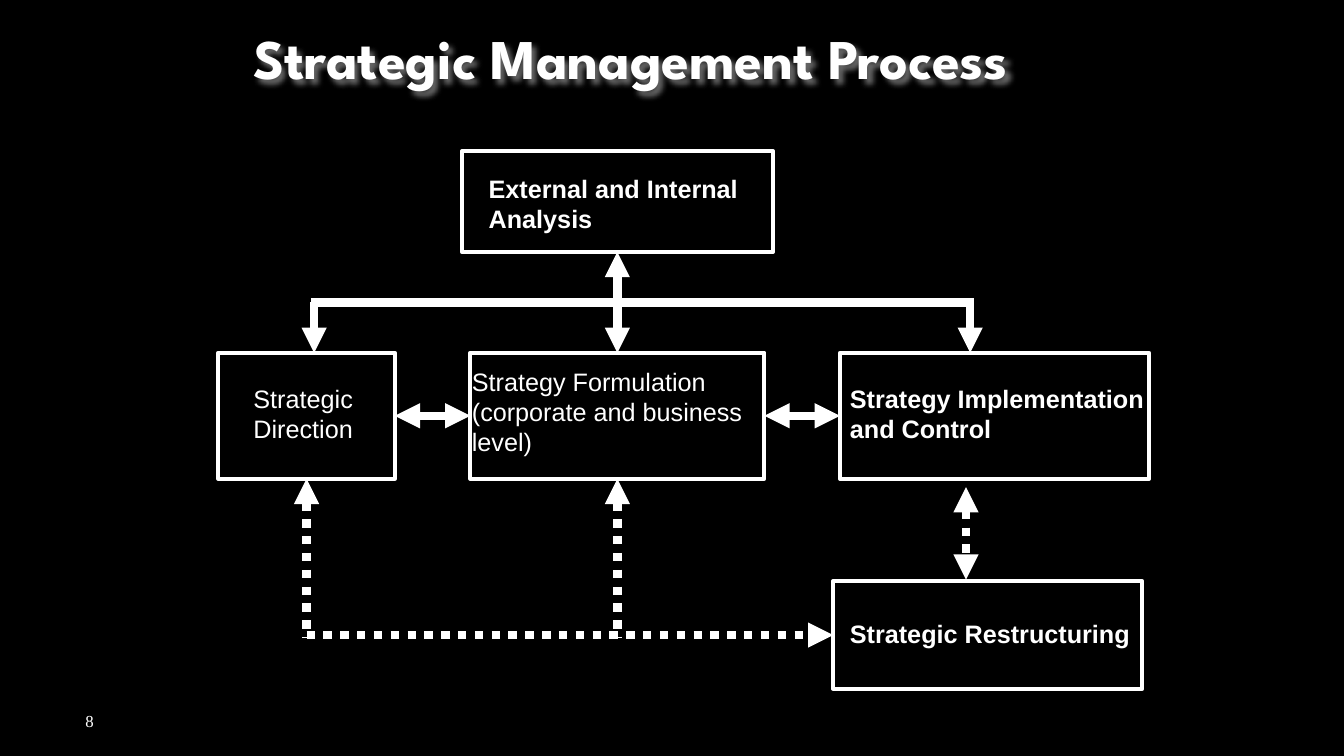
from dataclasses import dataclass

from lxml.etree import SubElement
from pptx import Presentation
from pptx.dml.color import RGBColor
from pptx.enum.dml import MSO_LINE
from pptx.enum.shapes import MSO_CONNECTOR, MSO_SHAPE
from pptx.enum.text import MSO_ANCHOR, MSO_AUTO_SIZE, PP_ALIGN
from pptx.oxml.ns import qn
from pptx.util import Inches, Pt

TOP, LEFT, BOTTOM, RIGHT = range(4)


@dataclass(frozen=True)
class Theme:
    back: str = "000000"
    ink: str = "FFFFFF"
    body: str = "Arial"
    head: str = "League Spartan"
    foot: str = "Times New Roman"
    body_size: int = 18
    head_size: int = 40
    foot_size: int = 12
    frame: int = 3
    arrow: int = 6


class Chart:
    """Draws on a grid of 160 columns by 90 rows, twelve to the inch."""

    def __init__(self, deck, theme):
        self.theme = theme
        self.ink = RGBColor.from_string(theme.ink)
        self.slide = deck.slides.add_slide(deck.slide_layouts[6])
        fill = self.slide.background.fill
        fill.solid()
        fill.fore_color.rgb = RGBColor.from_string(theme.back)

    def grid(self, *cells):
        return [Inches(cell / 12) for cell in cells]

    def box(self, *area):
        box = self.slide.shapes.add_shape(MSO_SHAPE.RECTANGLE, *self.grid(*area))
        box.shadow.inherit = False
        box.fill.background()
        box.line.color.rgb = self.ink
        box.line.width = Pt(self.theme.frame)
        return box

    def text(self, lines, area, bold=False, wrap=True, font=None, size=None, grow=True):
        label = self.slide.shapes.add_textbox(*self.grid(*area))
        frame = label.text_frame
        frame.word_wrap = wrap
        frame.auto_size = MSO_AUTO_SIZE.SHAPE_TO_FIT_TEXT if grow else MSO_AUTO_SIZE.NONE
        frame.vertical_anchor = MSO_ANCHOR.TOP if grow else MSO_ANCHOR.MIDDLE
        frame.text = lines
        for part in frame.paragraphs:
            part.alignment = PP_ALIGN.LEFT
            part.font.name = font or self.theme.body
            part.font.size = Pt(size or self.theme.body_size)
            part.font.bold = bold
            part.font.color.rgb = self.ink
        return label

    def title(self, words, area):
        label = self.text(words, area, True, font=self.theme.head, size=self.theme.head_size)
        glow = SubElement(label.element.spPr, qn("a:effectLst"))
        cast = SubElement(glow, qn("a:outerShdw"), blurRad="50800", dist="50800",
                          dir="2700000", algn="tl", rotWithShape="0")
        tint = SubElement(cast, qn("a:srgbClr"), val=self.theme.ink)
        SubElement(tint, qn("a:alpha"), val="40000")

    def line(self, start, end, tips="", dots=False):
        line = self.slide.shapes.add_connector(MSO_CONNECTOR.STRAIGHT, 0, 0, 0, 0)
        if isinstance(start[0], (int, float)):
            line.begin_x, line.begin_y = self.grid(*start)
        else:
            line.begin_connect(*start)
        if isinstance(end[0], (int, float)):
            line.end_x, line.end_y = self.grid(*end)
        else:
            line.end_connect(*end)
        line.line.color.rgb = self.ink
        line.line.width = Pt(self.theme.arrow)
        if dots:
            line.line.dash_style = MSO_LINE.ROUND_DOT
        stroke = line.line._get_or_add_ln()
        for tip in tips.split():
            SubElement(stroke, qn(f"a:{tip}End"), type="triangle")
        SubElement(line.element.spPr, qn("a:effectLst"))


def main():
    theme = Theme()
    deck = Presentation()
    deck.slide_width, deck.slide_height = Inches(160 / 12), Inches(7.5)
    chart = Chart(deck, theme)
    both = "head tail"

    chart.text("8", (9, 83.4, 102, 4.8), font=theme.foot, size=theme.foot_size, grow=False)

    control = chart.box(100, 42, 36.8, 15)
    formula = chart.box(56, 42, 35, 15)
    aim = chart.box(26, 42, 21, 15)
    rebuild = chart.box(99.2, 69.2, 36.8, 12.8)
    study = chart.box(55, 18, 37, 12)

    chart.text("Strategic\nDirection", (29, 45, 14.4, 8.4), wrap=False)
    chart.text("Strategy Formulation\n(corporate and business level)", (55, 43, 36, 12))
    chart.text("Strategy Implementation\nand Control", (100, 45, 38, 8.4), True)
    chart.text("Strategic Restructuring", (100, 73, 36, 4.8), True, wrap=False)
    chart.text("External and Internal Analysis", (57, 20, 33.4, 8.4), True)

    chart.line((37, 36), (116, 36))
    for col in (37.4, 115.5):
        chart.line((col, 36), (col, 42), "tail")
    chart.line((study, BOTTOM), (formula, TOP), both)

    for box, col in ((aim, 36.5), (formula, 73.5)):
        chart.line((box, BOTTOM), (col, 76), "head", dots=True)
    chart.line((115, 58), (115, 69), both, dots=True)
    chart.line((36.5, 75.6), (rebuild, LEFT), "tail", dots=True)

    chart.line((aim, RIGHT), (formula, LEFT), both)
    chart.line((formula, RIGHT), (control, LEFT), both)

    chart.title("Strategic Management Process", (29, 2.2, 119.3, 9.2))
    deck.save("out.pptx")


if __name__ == "__main__":
    main()
